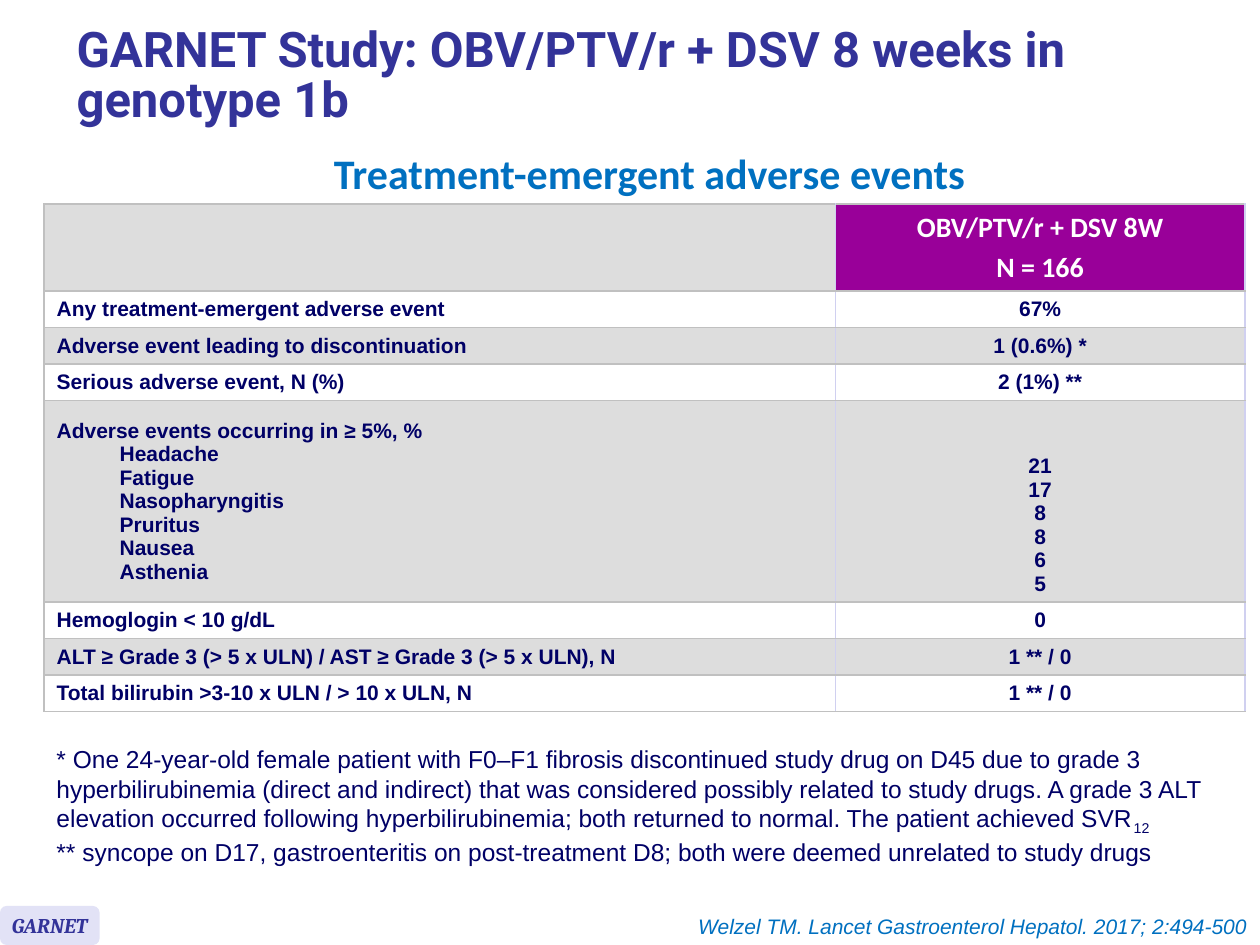
"""Build the GARNET study slide on treatment-emergent adverse events."""
from dataclasses import dataclass

from lxml import etree
from pptx import Presentation
from pptx import util as u
from pptx.dml import color
from pptx.enum import shapes, text
from pptx.oxml import ns

NAVY, INDIGO, BLUE = "000066", "333399", "0070C0"
WHITE, GREY, PURPLE = "FFFFFF", "DDDDDD", "990099"
RULE, SIDE_RULE = "C0C0C0", "D0D0F0"
LEFT, CENTER, RIGHT = text.PP_ALIGN.LEFT, text.PP_ALIGN.CENTER, text.PP_ALIGN.RIGHT
MIDDLE, TOP = text.MSO_ANCHOR.MIDDLE, text.MSO_ANCHOR.TOP
LINE = 0.19


@dataclass
class Event:
    label: str
    result: str = ""
    symptoms: tuple[tuple[str, str], ...] = ()


EVENTS = [
    Event("Any treatment-emergent adverse event", "67%"),
    Event("Adverse event leading to discontinuation", "1 (0.6%) *"),
    Event("Serious adverse event, N (%)", "2 (1%) **"),
    Event("Adverse events occurring in ≥ 5%, %", symptoms=(
        ("Headache", "21"), ("Fatigue", "17"), ("Nasopharyngitis", "8"),
        ("Pruritus", "8"), ("Nausea", "6"), ("Asthenia", "5"))),
    Event("Hemoglogin < 10 g/dL", "0"),
    Event("ALT ≥ Grade 3 (> 5 x ULN) / AST ≥ Grade 3 (> 5 x ULN), N", "1 ** / 0"),
    Event("Total bilirubin >3-10 x ULN / > 10 x ULN, N", "1 ** / 0"),
]
FOOTNOTES = [
    "* One 24-year-old female patient with F0–F1 fibrosis discontinued study drug on D45 due to grade 3",
    "hyperbilirubinemia (direct and indirect) that was considered possibly related to study drugs. A grade 3 ALT",
    "elevation occurred following hyperbilirubinemia; both returned to normal. The patient achieved SVR",
    "** syncope on D17, gastroenteritis on post-treatment D8; both were deemed unrelated to study drugs",
]


def rgb(value: str) -> color.RGBColor:
    return color.RGBColor.from_string(value)


def write(frame, lines, *, size=12, font="Arial", ink=NAVY, bold=False, italic=False,
          align=LEFT, spacing=None, gap=0, indent=0.0):
    """Write one paragraph per line; gap and indent apply after the first."""
    for index, line in enumerate(lines):
        paragraph = frame.add_paragraph() if index else frame.paragraphs[0]
        paragraph.alignment = align
        if spacing:
            paragraph.line_spacing = spacing
        if index and gap:
            paragraph.space_before = u.Pt(gap)
        if index and indent:
            paragraph.level = 1
            properties = paragraph._p.get_or_add_pPr()
            properties.set("marL", str(u.Inches(indent)))
            properties.set("indent", "0")
        add_run(paragraph, line, size, font, ink, bold, italic)


def add_run(paragraph, content: str, size=12, font="Arial", ink=NAVY, bold=False, italic=False):
    run = paragraph.add_run()
    run.text = content
    run.font.size, run.font.name = u.Pt(size), font
    run.font.bold, run.font.italic = bold, italic
    run.font.color.rgb = rgb(ink)
    return run


def add_text(slide, box, lines, anchor=TOP, **style):
    frame = slide.shapes.add_textbox(*map(u.Inches, box)).text_frame
    frame.word_wrap = True
    frame.vertical_anchor = anchor
    write(frame, lines, **style)
    return frame


def style_cell(cell, fill: str, left_rule: str):
    """Set the borders, fill and anchor of a table cell."""
    cell.vertical_anchor = MIDDLE
    properties = cell._tc.get_or_add_tcPr()
    sides = {"lnL": left_rule, "lnR": SIDE_RULE, "lnT": RULE, "lnB": RULE}
    for side, ink in sides.items():
        line = etree.SubElement(properties, ns.qn(f"a:{side}"), w=str(u.Pt(1)))
        solid = etree.SubElement(line, ns.qn("a:solidFill"))
        etree.SubElement(solid, ns.qn("a:srgbClr"), val=ink)
    cell.fill.solid()
    cell.fill.fore_color.rgb = rgb(fill)


def add_events_table(slide, events: list[Event]):
    heights = [0.69] + [1.59 if event.symptoms else 0.29 for event in events]
    table = slide.shapes.add_table(
        len(heights), 2, *map(u.Inches, (0.35, 1.62, 9.53, sum(heights)))).table
    table.first_row = table.horz_banding = False
    for column, width in zip(table.columns, (6.28, 3.25)):
        column.width = u.Inches(width)
    for index, height in enumerate(heights):
        table.rows[index].height = u.Inches(height)
        fill = WHITE if index % 2 else GREY
        style_cell(table.cell(index, 0), fill, RULE)
        style_cell(table.cell(index, 1), fill if index else PURPLE, SIDE_RULE)
    write(table.cell(0, 1).text_frame, ["OBV/PTV/r + DSV 8W", "N = 166"],
          size=16, font="Calibri", ink=WHITE, bold=True, align=CENTER, gap=3.2)
    for index, event in enumerate(events, 1):
        label, result = table.cell(index, 0), table.cell(index, 1)
        names = [name for name, _ in event.symptoms]
        rates = [rate for _, rate in event.symptoms]
        write(label.text_frame, [event.label, *names], bold=True, indent=0.5)
        write(result.text_frame, rates or [event.result], bold=True, align=CENTER)
        if rates:
            result.margin_top = u.Inches(0.05 + 2 * LINE)


def add_study_tag(slide):
    tag = slide.shapes.add_shape(
        shapes.MSO_SHAPE.ROUNDED_RECTANGLE, *map(u.Inches, (0, 7.19, 0.79, 0.31)))
    tag.shadow.inherit = False
    tag.fill.solid()
    tag.fill.fore_color.rgb = rgb("E2E2F6")
    tag.line.fill.background()
    tag.text_frame.word_wrap = False
    tag.text_frame.vertical_anchor = MIDDLE
    write(tag.text_frame, ["GARNET"], font="Cambria", ink=INDIGO,
          bold=True, italic=True, align=CENTER)


def main():
    deck = Presentation()
    deck.slide_width, deck.slide_height = u.Inches(10), u.Inches(7.5)
    slide = deck.slides.add_slide(deck.slide_layouts[6])
    add_events_table(slide, EVENTS)
    add_text(slide, (0.43, 1.31, 9.45, 0.35), ["Treatment-emergent adverse events"],
             size=24, font="Calibri", ink=BLUE, bold=True, align=CENTER, spacing=u.Pt(15.2))
    footnotes = add_text(slide, (0.35, 5.86, 9.37, 1.04), FOOTNOTES, size=14)
    subscript = add_run(footnotes.paragraphs[2], "12", size=14)
    subscript.font._element.set("baseline", "-25000")
    add_study_tag(slide)
    add_text(slide, (0.51, 0.08, 9.13, 1.07),
             ["GARNET Study: OBV/PTV/r + DSV 8 weeks in genotype 1b"],
             anchor=MIDDLE, size=28, font="Roboto", ink=INDIGO, bold=True, spacing=0.85)
    add_text(slide, (2.09, 7.2, 7.91, 0.3),
             ["Welzel TM. Lancet Gastroenterol Hepatol. 2017; 2:494-500"],
             ink=BLUE, italic=True, align=RIGHT)
    deck.save("out.pptx")


if __name__ == "__main__":
    main()
